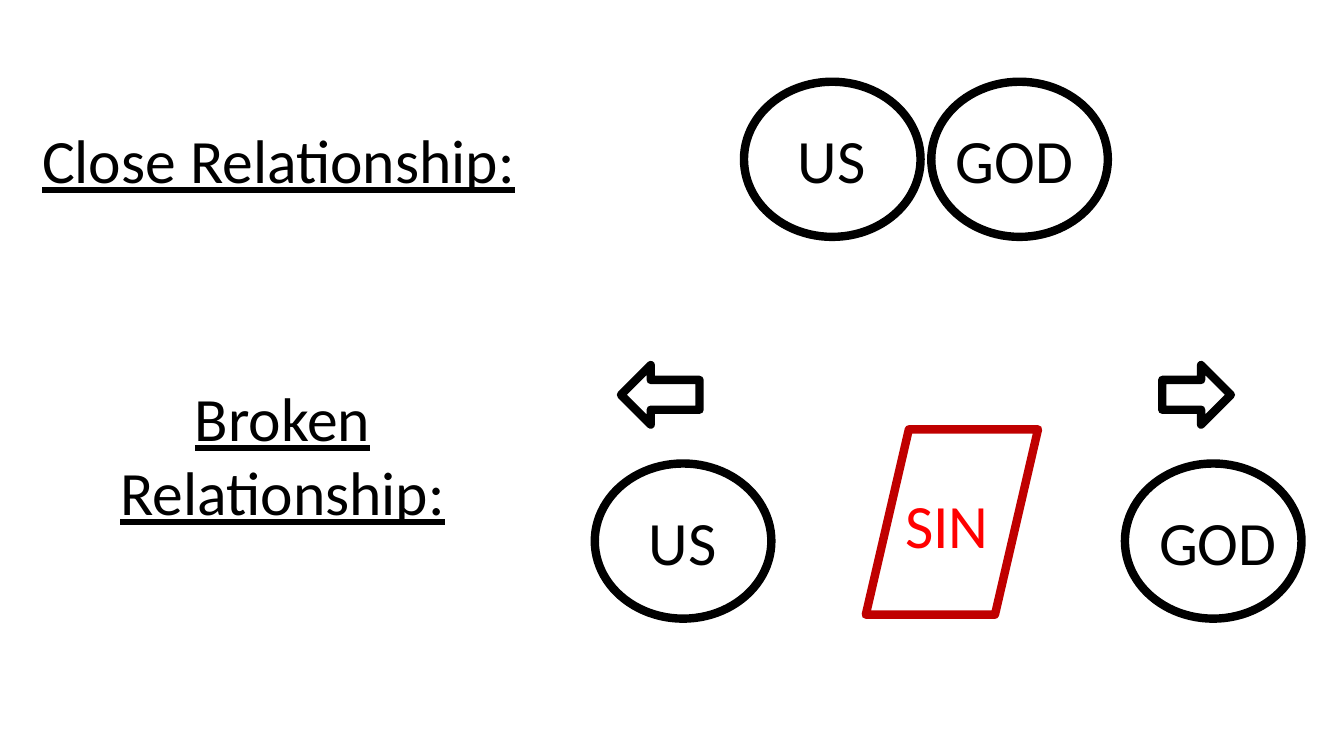
from pptx import Presentation
from pptx.dml.color import RGBColor
from pptx.enum.shapes import MSO_SHAPE as Preset
from pptx.enum.text import MSO_AUTO_SIZE as AutoSize, PP_ALIGN as Align
from pptx.util import Cm, Pt

BLACK = "000000"
DARK_RED = "C00000"
RED = "FF0000"


def color(value):
    return RGBColor.from_string(value)


class RelationshipSlide:
    font_name = "Calibri"
    font_size = Pt(44)
    line_width = Pt(6)
    circle_width, circle_height = 4.45, 3.91
    label_height = 2.13

    def __init__(self, presentation):
        self.slide = presentation.slides.add_slide(presentation.slide_layouts[6])

    def outline(self, preset, left, top, width, height, line=BLACK):
        shape = self.slide.shapes.add_shape(
            preset, Cm(left), Cm(top), Cm(width), Cm(height))
        shape.shadow.inherit = False
        shape.fill.background()
        shape.line.color.rgb = color(line)
        shape.line.width = self.line_width

    def label(self, text, left, top, width, height=label_height,
              ink=BLACK, underline=False, align=Align.LEFT):
        box = self.slide.shapes.add_textbox(
            Cm(left), Cm(top), Cm(width), Cm(height))
        frame = box.text_frame
        frame.word_wrap = True
        frame.auto_size = AutoSize.SHAPE_TO_FIT_TEXT
        paragraph = frame.paragraphs[0]
        paragraph.text = text
        paragraph.alignment = align
        paragraph.font.name = self.font_name
        paragraph.font.size = self.font_size
        paragraph.font.color.rgb = color(ink)
        paragraph.font.underline = underline

    def circle(self, text, left, top, label_width, label_shift=0):
        self.outline(Preset.OVAL, left, top, self.circle_width, self.circle_height)
        self.label(text,
                   left + (self.circle_width - label_width) / 2 + label_shift,
                   top + (self.circle_height - self.label_height) / 2,
                   label_width)


def main():
    presentation = Presentation()
    presentation.slide_width = Cm(33.87)
    presentation.slide_height = Cm(19.05)
    page = RelationshipSlide(presentation)
    us_width, god_width = 2.24, 3.71

    close_top = 2.06
    page.label("Close Relationship:", 0.81, 2.95, 12.62, underline=True)
    page.circle("US", 18.75, close_top, us_width)
    page.circle("GOD", 23.47, close_top, god_width)

    broken_top, arrow_top, arrow_height = 11.68, 9.2, 1.5
    page.label("Broken Relationship:", 2.49, 9.46, 9.27, 4.02,
               underline=True, align=Align.CENTER)
    page.circle("US", 14.99, broken_top, us_width)
    page.circle("GOD", 28.35, broken_top, god_width, label_shift=0.24)
    page.outline(Preset.PARALLELOGRAM, 21.82, 10.82, 4.34, 4.67, DARK_RED)
    page.label("SIN", 22.56, 12.14, 2.84, ink=RED)
    page.outline(Preset.LEFT_ARROW, 15.65, arrow_top, 1.98, arrow_height)
    page.outline(Preset.RIGHT_ARROW, 29.29, arrow_top, 1.73, arrow_height)

    presentation.save("out.pptx")


if __name__ == "__main__":
    main()
